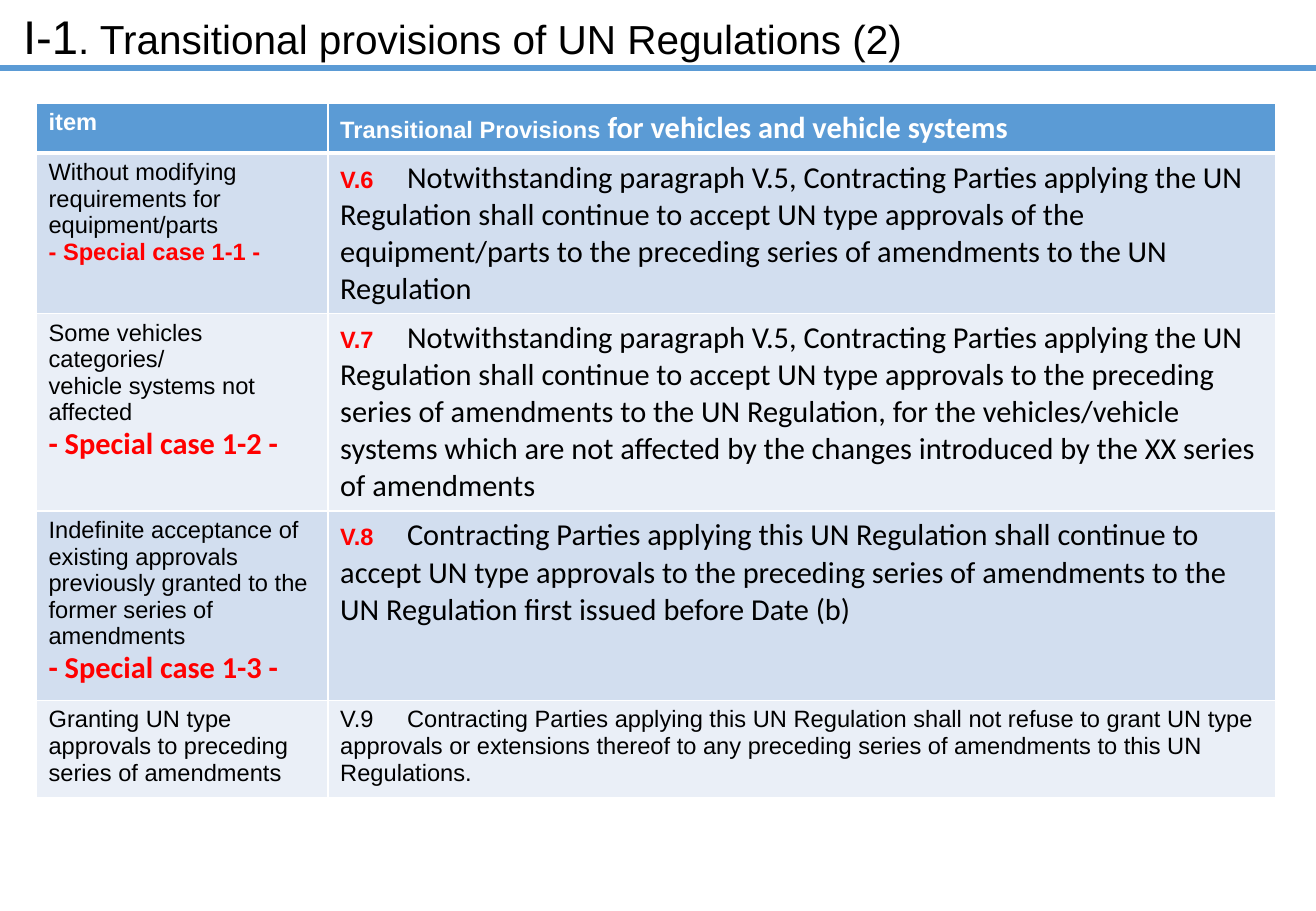
"""Build the slide on transitional provisions of UN Regulations."""
import pptx
import pptx.dml.color
import pptx.enum.shapes
import pptx.enum.text
import pptx.oxml
import pptx.oxml.ns
import pptx.util

Inches = pptx.util.Inches
Pt = pptx.util.Pt
RGBColor = pptx.dml.color.RGBColor

BLUE = RGBColor(0x5B, 0x9B, 0xD5)
DARK_BAND = RGBColor(0xD2, 0xDE, 0xEF)
LIGHT_BAND = RGBColor(0xEA, 0xEF, 0xF7)
WHITE = RGBColor(0xFF, 0xFF, 0xFF)
BLACK = RGBColor(0, 0, 0)
RED = RGBColor(0xFF, 0, 0)

PLAIN = ("Arial", 14, BLACK, False)
LARGE = ("Calibri", 18, BLACK, False)
RED_SMALL = ("Arial", 14, RED, True)
RED_LARGE = ("Calibri", 18, RED, True)
HEAD_SMALL = ("Arial", 14, WHITE, True)
HEAD_LARGE = ("Calibri", 18, WHITE, True)

COLUMN_WIDTHS = [2.4, 7.8]
ROW_HEIGHTS = [0.41, 1.29, 1.6, 1.56, 0.8]
CLAUSE_TAB = Inches(0.55)
NAMESPACE = pptx.oxml.ns.nsdecls("a")


def add_spans(para, spans):
    """Add styled pieces of text to a paragraph."""
    for text, (font, size, color, bold) in spans:
        span = para.add_run()
        span.text = text
        span.font.name = font
        span.font.size = Pt(size)
        span.font.color.rgb = color
        span.font.bold = bold


def add_borders(cell, bottom_width):
    """Draw white borders round a table cell."""
    properties = cell._tc.get_or_add_tcPr()
    for side, width in (("L", 1), ("R", 1), ("T", 1), ("B", bottom_width)):
        properties.append(pptx.oxml.parse_xml(
            f'<a:ln{side} {NAMESPACE} w="{Pt(width)}"><a:solidFill>'
            f'<a:srgbClr val="{WHITE}"/></a:solidFill></a:ln{side}>'))


rows = [
    [
        [[("item", HEAD_SMALL)]],
        [[("Transitional Provisions ", HEAD_SMALL),
          ("for vehicles and vehicle systems", HEAD_LARGE)]],
    ],
    [
        [[("Without modifying requirements for equipment/parts", PLAIN)],
         [("- Special case 1-1 -", RED_SMALL)]],
        [[("V.6\t", RED_SMALL),
          ("Notwithstanding paragraph V.5, Contracting Parties applying the UN "
           "Regulation shall continue to accept UN type approvals of the "
           "equipment/parts to the preceding series of amendments to the UN "
           "Regulation", LARGE)]],
    ],
    [
        [[("Some vehicles categories/", PLAIN)],
         [("vehicle systems not affected", PLAIN)],
         [("- Special case 1-2 -", RED_LARGE)]],
        [[("V.7\t", RED_SMALL),
          ("Notwithstanding paragraph V.5, Contracting Parties applying the UN "
           "Regulation shall continue to accept UN type approvals to the preceding "
           "series of amendments to the UN Regulation, for the vehicles/vehicle "
           "systems which are not affected by the changes introduced by the XX "
           "series of amendments", LARGE)]],
    ],
    [
        [[("Indefinite acceptance of existing approvals previously granted to the "
           "former series of amendments", PLAIN)],
         [("- Special case 1-3 -", RED_LARGE)]],
        [[("V.8\t", RED_SMALL),
          ("Contracting Parties applying this UN Regulation shall continue to "
           "accept UN type approvals to the preceding series of amendments to the "
           "UN Regulation first issued before Date (b)", LARGE)]],
    ],
    [
        [[("Granting UN type approvals to preceding series of amendments", PLAIN)]],
        [[("V.9\tContracting Parties applying this UN Regulation shall not refuse "
           "to grant UN type approvals or extensions thereof to any preceding "
           "series of amendments to this UN Regulations.", PLAIN)]],
    ],
]

deck = pptx.Presentation()
deck.slide_width = Inches(10.83)
deck.slide_height = Inches(7.5)
page = deck.slides.add_slide(deck.slide_layouts[5])

title = page.shapes.title
title.left, title.top = Inches(0.09), Inches(0.01)
title.width, title.height = Inches(9), Inches(0.57)
title.text_frame.auto_size = pptx.enum.text.MSO_AUTO_SIZE.NONE
title.text_frame.vertical_anchor = pptx.enum.text.MSO_ANCHOR.TOP
heading = title.text_frame.paragraphs[0]
heading.alignment = pptx.enum.text.PP_ALIGN.LEFT
add_spans(heading, [
    ("I-1", ("Arial", 28, BLACK, False)),
    (". Transitional provisions of UN Regulations (2)", ("Arial", 24, BLACK, False)),
])

rule = page.shapes.add_connector(
    pptx.enum.shapes.MSO_CONNECTOR.STRAIGHT,
    0, Inches(0.56), deck.slide_width, Inches(0.56))
rule.line.color.rgb = BLUE
rule.line.width = Pt(3)
rule._element.spPr.append(pptx.oxml.parse_xml(f"<a:effectLst {NAMESPACE}/>"))

table = page.shapes.add_table(
    len(ROW_HEIGHTS), len(COLUMN_WIDTHS), Inches(0.3), Inches(0.85),
    Inches(sum(COLUMN_WIDTHS)), Inches(sum(ROW_HEIGHTS))).table
for column, width in zip(table.columns, COLUMN_WIDTHS):
    column.width = Inches(width)

for row_index, (row, height) in enumerate(zip(rows, ROW_HEIGHTS)):
    table.rows[row_index].height = Inches(height)
    band = BLUE if row_index == 0 else (LIGHT_BAND, DARK_BAND)[row_index % 2]
    for column_index, paragraphs in enumerate(row):
        cell = table.cell(row_index, column_index)
        add_borders(cell, 3 if row_index == 0 else 1)
        cell.fill.solid()
        cell.fill.fore_color.rgb = band
        for para_index, spans in enumerate(paragraphs):
            frame = cell.text_frame
            para = frame.add_paragraph() if para_index else frame.paragraphs[0]
            add_spans(para, spans)
            if "\t" in para.text:
                para._p.get_or_add_pPr().append(pptx.oxml.parse_xml(
                    f'<a:tabLst {NAMESPACE}><a:tab pos="{CLAUSE_TAB}" algn="l"/>'
                    '</a:tabLst>'))

deck.save("out.pptx")
